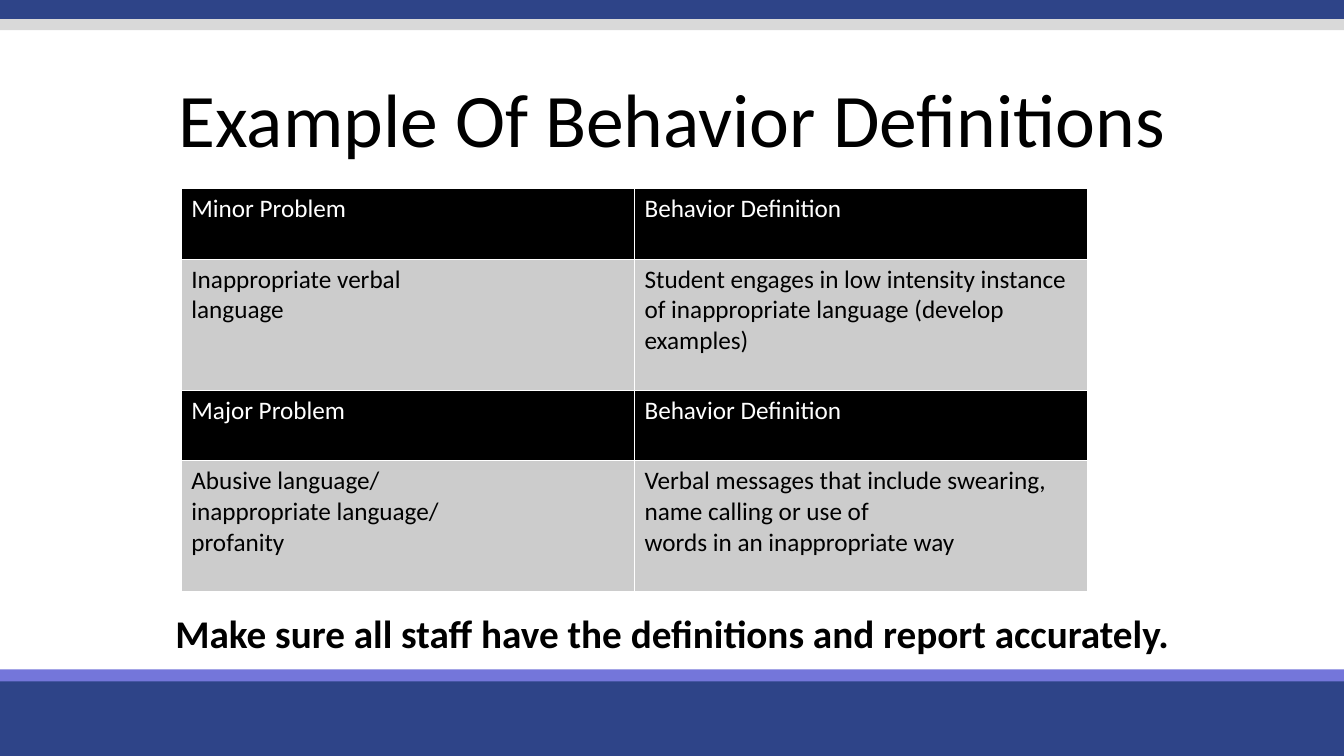
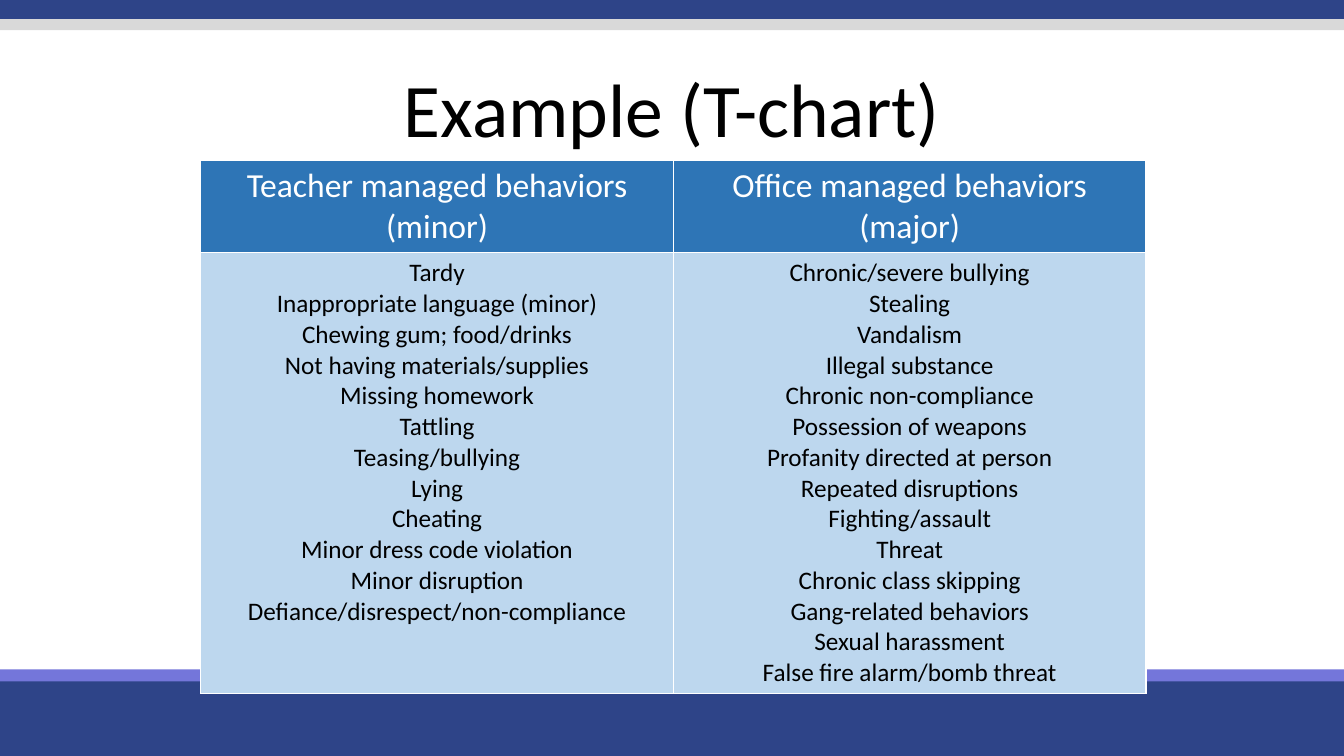
from dataclasses import dataclass

from lxml.etree import SubElement
from pptx import Presentation
from pptx.dml.color import RGBColor
from pptx.enum.shapes import MSO_SHAPE
from pptx.enum.text import MSO_ANCHOR, MSO_AUTO_SIZE, PP_ALIGN
from pptx.oxml.ns import qn
from pptx.util import Cm, Pt


@dataclass(frozen=True)
class Theme:
    font: str = "Calibri"
    navy: str = "2E4488"
    violet: str = "7476DA"
    silver: str = "D9D9D9"
    black: str = "000000"
    white: str = "FFFFFF"
    grey: str = "CCCCCC"
    blue: str = "2E75B6"
    pale_blue: str = "BDD7EE"
    title_size: int = 54
    reminder_size: int = 28
    heading_size: int = 24
    body_size: int = 18
    border: float = 1


THEME = Theme()
SLIDE_WIDTH, SLIDE_HEIGHT = 33.87, 19.05
TITLE_ONLY = 5
FIRST_BAND_ID = 100

BANDS = [
    (17.02, 2.03, THEME.navy),
    (16.87, 0.3, THEME.violet),
    (0, 0.48, THEME.navy),
    (0.48, 0.28, THEME.silver),
]

DEFINITIONS = [
    (
        "Minor Problem",
        "Inappropriate verbal\nlanguage",
        "Student engages in low intensity instance of inappropriate language (develop examples)",
    ),
    (
        "Major Problem",
        "Abusive language/\ninappropriate language/\nprofanity",
        "Verbal messages that include swearing, name calling or use of\nwords in an inappropriate way",
    ),
]

TEACHER_MANAGED = [
    "Tardy",
    "Inappropriate language (minor)",
    "Chewing gum; food/drinks",
    "Not having materials/supplies",
    "Missing homework",
    "Tattling",
    "Teasing/bullying",
    "Lying",
    "Cheating",
    "Minor dress code violation",
    "Minor disruption",
    "Defiance/disrespect/non-compliance",
]

OFFICE_MANAGED = [
    "Chronic/severe bullying",
    "Stealing",
    "Vandalism",
    "Illegal substance",
    "Chronic non-compliance",
    "Possession of weapons",
    "Profanity directed at person",
    "Repeated disruptions",
    "Fighting/assault",
    "Threat",
    "Chronic class skipping",
    "Gang-related behaviors",
    "Sexual harassment",
    "False fire alarm/bomb threat",
]


def write_text(frame, text, size=THEME.body_size, color=THEME.black, bold=False,
               align=PP_ALIGN.LEFT, line_spacing=None):
    frame.word_wrap = True
    for index, line in enumerate(text.split("\n")):
        paragraph = frame.add_paragraph() if index else frame.paragraphs[0]
        paragraph.alignment = align
        if line_spacing:
            paragraph.line_spacing = line_spacing
        run = paragraph.add_run()
        run.text = line
        run.font.name = THEME.font
        run.font.size = Pt(size)
        run.font.bold = bold
        run.font.color.rgb = RGBColor.from_string(color)


def add_bands(slide):
    layout_tree = slide.slide_layout.shapes._spTree
    for index, (top, height, color) in enumerate(BANDS):
        band = slide.shapes.add_shape(
            MSO_SHAPE.RECTANGLE, 0, Cm(top), Cm(SLIDE_WIDTH), Cm(height))
        band.shadow.inherit = False
        band.fill.solid()
        band.fill.fore_color.rgb = RGBColor.from_string(color)
        band.line.fill.background()
        band._element.nvSpPr.cNvPr.set("id", str(FIRST_BAND_ID + index))
        layout_tree.insert(2 + index, band._element)


def set_title(slide, text, top, height):
    title = slide.shapes.title
    title.left, title.top = 0, Cm(top)
    title.width, title.height = Cm(SLIDE_WIDTH), Cm(height)
    title.text_frame.auto_size = MSO_AUTO_SIZE.NONE
    title.text_frame.vertical_anchor = MSO_ANCHOR.BOTTOM
    write_text(title.text_frame, text, size=THEME.title_size,
               align=PP_ALIGN.CENTER, line_spacing=0.9)


def set_borders(cell):
    properties = cell._tc.get_or_add_tcPr()
    for side in ("a:lnL", "a:lnR", "a:lnT", "a:lnB"):
        border = SubElement(properties, qn(side), w=str(Pt(THEME.border)))
        fill = SubElement(border, qn("a:solidFill"))
        SubElement(fill, qn("a:srgbClr"), val=THEME.white)


def add_two_column_table(slide, headings, bodies, left, top, column_width, row_heights,
                         fills, heading_size=THEME.body_size, align=PP_ALIGN.LEFT):
    table = slide.shapes.add_table(
        2, 2, Cm(left), Cm(top), Cm(2 * column_width), Cm(sum(row_heights))).table
    for column in table.columns:
        column.width = Cm(column_width)
    styles = [(heading_size, THEME.white), (THEME.body_size, THEME.black)]
    for row, texts in enumerate((headings, bodies)):
        table.rows[row].height = Cm(row_heights[row])
        size, color = styles[row]
        for column, text in enumerate(texts):
            cell = table.cell(row, column)
            set_borders(cell)
            cell.fill.solid()
            cell.fill.fore_color.rgb = RGBColor.from_string(fills[row])
            write_text(cell.text_frame, text, size=size, color=color, align=align)


def add_reminder(slide, text, top, height):
    reminder = slide.shapes.add_textbox(0, Cm(top), Cm(SLIDE_WIDTH), Cm(height))
    reminder.text_frame.vertical_anchor = MSO_ANCHOR.MIDDLE
    write_text(reminder.text_frame, text, size=THEME.reminder_size, bold=True,
               align=PP_ALIGN.CENTER)


def build_definitions(slide):
    set_title(slide, "Example Of Behavior Definitions", top=2.1, height=2.16)
    row_heights = (1.78, 3.3)
    for index, (problem, behavior, definition) in enumerate(DEFINITIONS):
        add_two_column_table(
            slide, (problem, "Behavior Definition"), (behavior, definition),
            left=4.57, top=4.75 + index * sum(row_heights), column_width=11.42,
            row_heights=row_heights, fills=(THEME.black, THEME.grey))
    add_reminder(slide, "Make sure all staff have the definitions and report accurately.",
                 top=15.04, height=1.8)


def build_t_chart(slide):
    set_title(slide, "Example (T-chart)", top=2, height=2)
    add_two_column_table(
        slide,
        ("Teacher managed behaviors (minor)", "Office managed behaviors (major)"),
        ("\n".join(TEACHER_MANAGED), "\n".join(OFFICE_MANAGED)),
        left=5.06, top=4.05, column_width=11.91, row_heights=(2.3, 11.1),
        fills=(THEME.blue, THEME.pale_blue), heading_size=THEME.heading_size,
        align=PP_ALIGN.CENTER)


def main():
    presentation = Presentation()
    presentation.slide_width = Cm(SLIDE_WIDTH)
    presentation.slide_height = Cm(SLIDE_HEIGHT)
    layout = presentation.slide_layouts[TITLE_ONLY]
    definitions = presentation.slides.add_slide(layout)
    add_bands(definitions)
    build_definitions(definitions)
    build_t_chart(presentation.slides.add_slide(layout))
    presentation.save("out.pptx")


if __name__ == "__main__":
    main()
